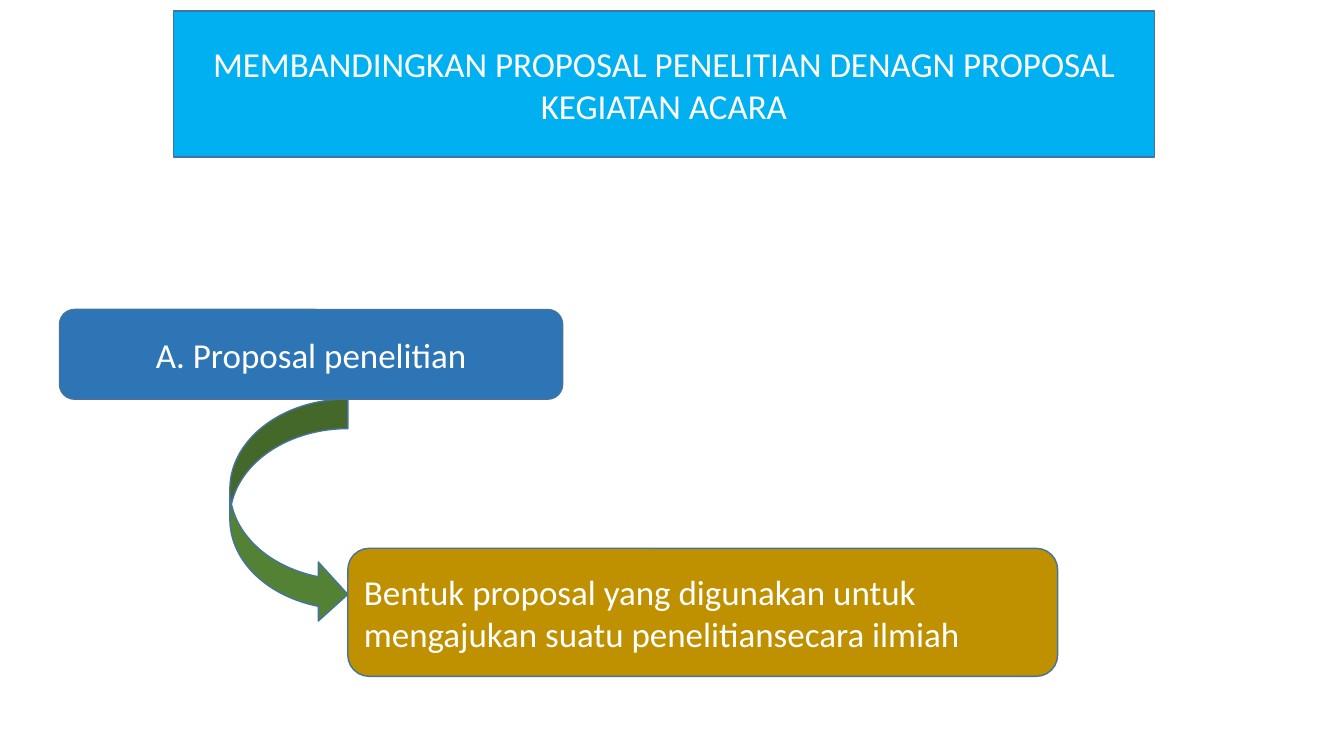
from dataclasses import dataclass

from pptx import Presentation
from pptx.dml.color import RGBColor
from pptx.enum.shapes import MSO_SHAPE as Preset
from pptx.enum.text import MSO_ANCHOR as Anchor, MSO_AUTO_SIZE as AutoSize, PP_ALIGN as Align
from pptx.util import Inches, Pt


@dataclass(frozen=True)
class Theme:
    font: str = "Calibri"
    text_size: float = 25
    text: str = "FFFFFF"
    outline: str = "43739E"
    outline_width: float = 1
    banner: str = "00B0F0"
    topic: str = "2E75B6"
    definition: str = "BF9000"
    arrow: str = "548235"


THEME = Theme()


def place(shape, box):
    shape.left, shape.top, shape.width, shape.height = map(Inches, box)


def paint(shape, fill):
    shape.fill.solid()
    shape.fill.fore_color.rgb = RGBColor.from_string(fill)
    shape.line.color.rgb = RGBColor.from_string(THEME.outline)
    shape.line.width = Pt(THEME.outline_width)


def write(shape, text, align=Align.CENTER, size=THEME.text_size, color=THEME.text):
    frame = shape.text_frame
    frame.auto_size = AutoSize.NONE
    frame.word_wrap = True
    frame.vertical_anchor = Anchor.MIDDLE
    paragraph = frame.paragraphs[0]
    paragraph.alignment = align
    paragraph.line_spacing = 1.0
    run = paragraph.add_run()
    run.text = text
    run.font.name = THEME.font
    run.font.size = Pt(size)
    run.font.color.rgb = RGBColor.from_string(color)


def add_preset(slide, preset, box, fill):
    shape = slide.shapes.add_shape(preset, *map(Inches, box))
    shape.shadow.inherit = False
    paint(shape, fill)
    return shape


def add_banner(slide, box, text):
    title = slide.shapes.title
    place(title, box)
    paint(title, THEME.banner)
    write(title, text)


def add_explanation(slide, box, topic, definition):
    left, top, width, height = box
    topic_width, topic_height = 4.99, 0.89
    definition_width, definition_height = 7.04, 1.27
    arrow_width, arrow_height = 1.17, 2.23
    definition_left = left + width - definition_width
    definition_top = top + height - definition_height

    definition_card = add_preset(
        slide, Preset.ROUNDED_RECTANGLE,
        (definition_left, definition_top, definition_width, definition_height),
        THEME.definition)
    write(definition_card, definition, align=Align.LEFT)

    topic_card = add_preset(
        slide, Preset.ROUNDED_RECTANGLE,
        (left, top, topic_width, topic_height), THEME.topic)
    write(topic_card, topic)

    add_preset(
        slide, Preset.CURVED_RIGHT_ARROW,
        (definition_left - arrow_width, top + topic_height, arrow_width, arrow_height),
        THEME.arrow)


def main():
    presentation = Presentation()
    presentation.slide_width = Inches(13.33)
    presentation.slide_height = Inches(7.5)
    slide = presentation.slides.add_slide(presentation.slide_layouts.get_by_name("Title Only"))
    add_banner(slide, (1.72, 0.11, 9.73, 1.45),
               "MEMBANDINGKAN PROPOSAL PENELITIAN DENAGN PROPOSAL KEGIATAN ACARA")
    add_explanation(
        slide, (0.59, 3.07, 9.9, 3.64),
        topic="A. Proposal penelitian",
        definition="Bentuk proposal yang digunakan untuk mengajukan suatu penelitiansecara ilmiah")
    presentation.save("out.pptx")


if __name__ == "__main__":
    main()
